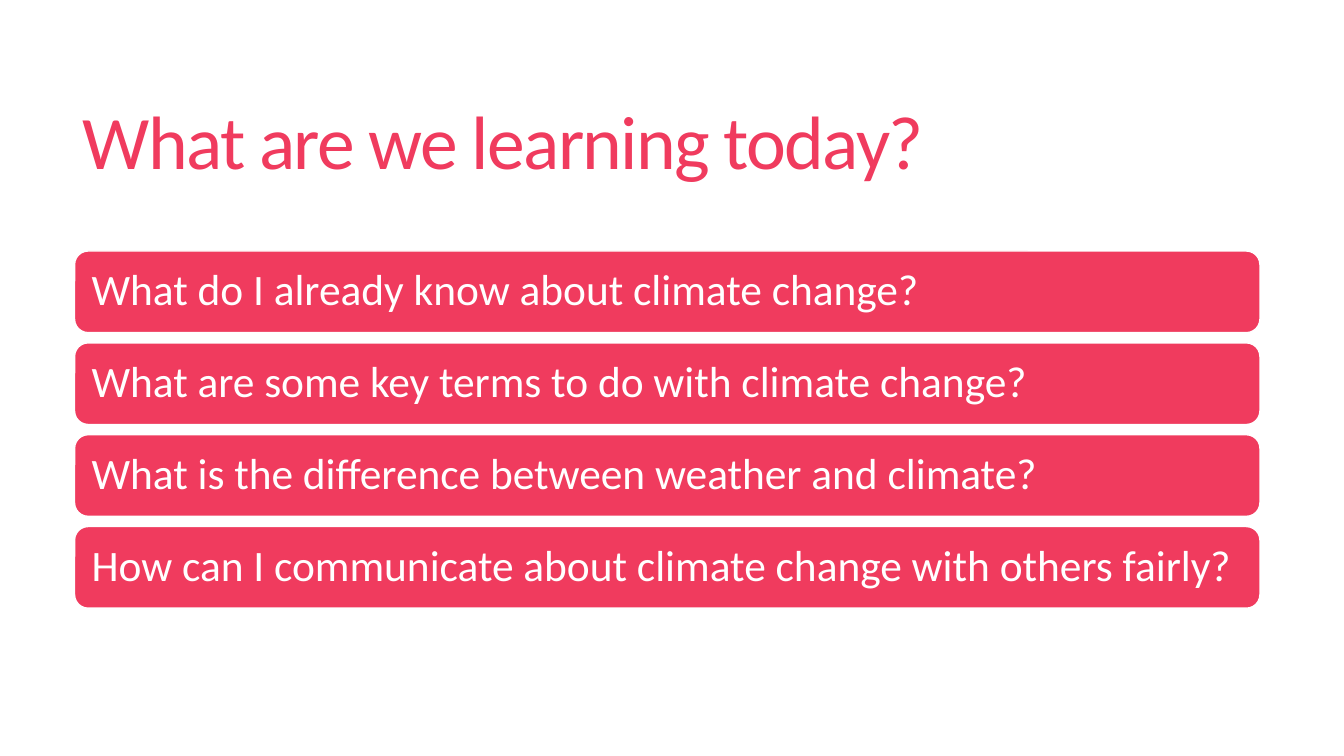
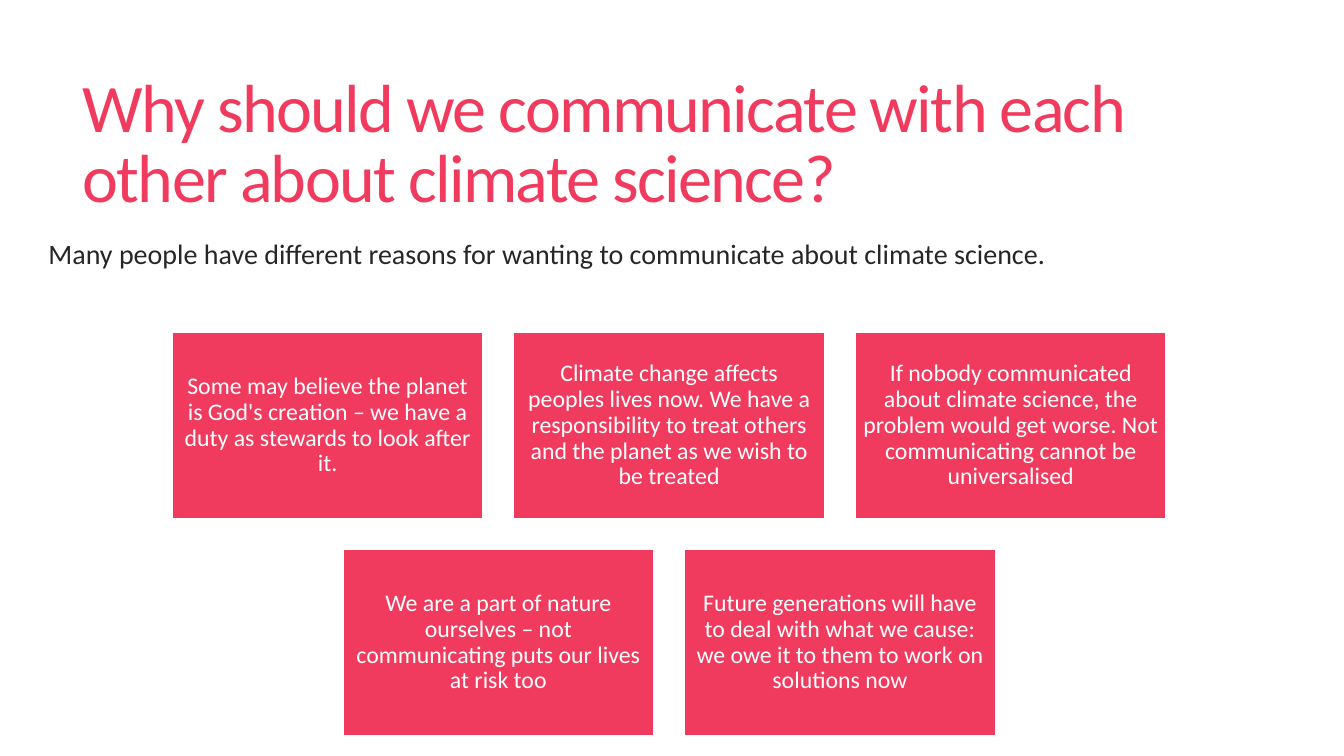
from dataclasses import dataclass

from pptx import Presentation
from pptx.dml.color import RGBColor
from pptx.enum import shapes, text
from pptx.util import Pt


@dataclass(frozen=True)
class Theme:
    font: str = "Calibri"
    accent: RGBColor = RGBColor(0xF0, 0x3B, 0x5E)
    ink: RGBColor = RGBColor(0x26, 0x26, 0x26)
    white: RGBColor = RGBColor(0xFF, 0xFF, 0xFF)
    title: float = 54
    long_title: float = 48.6
    question: float = 31
    lead: float = 20
    reason: float = 17


THEME = Theme()
LEFT, CENTER = text.PP_ALIGN.LEFT, text.PP_ALIGN.CENTER
TOP, MIDDLE = text.MSO_ANCHOR.TOP, text.MSO_ANCHOR.MIDDLE
TITLE_BOX = (51.8, 39.6, 848.2, 130.3)

AIMS = {
    "title": "What are we learning today?",
    "questions": [
        "What do I already know about climate change?",
        "What are some key terms to do with climate change?",
        "What is the difference between weather and climate?",
        "How can I communicate about climate change with others fairly?",
    ],
}
WHY = {
    "title": "Why should we communicate with each other about climate science?",
    "lead": "Many people have different reasons for wanting to communicate about climate science.",
    "reasons": [
        [
            "Some may believe the planet is God's creation – we have a duty as stewards to look after it.",
            "Climate change affects peoples lives now. We have a responsibility to treat others and the planet as we wish to be treated",
            "If nobody communicated about climate science, the problem would get worse. Not communicating cannot be universalised",
        ],
        [
            "We are a part of nature ourselves – not communicating puts our lives at risk too",
            "Future generations will have to deal with what we cause: we owe it to them to work on solutions now",
        ],
    ],
}


def write(sp, content, size, color, align=LEFT, anchor=MIDDLE, spacing=0.9, insets=(7.2, 3.6, 7.2, 3.6)):
    tf = sp.text_frame
    frame = {"word_wrap": True, "auto_size": text.MSO_AUTO_SIZE.NONE, "vertical_anchor": anchor}
    frame.update(zip(("margin_left", "margin_top", "margin_right", "margin_bottom"), map(Pt, insets)))
    for name, value in frame.items():
        setattr(tf, name, value)
    p = tf.paragraphs[0]
    p.alignment, p.line_spacing = align, spacing
    r = p.add_run()
    r.text = content
    for name, value in {"name": THEME.font, "size": Pt(size)}.items():
        setattr(r.font, name, value)
    r.font.color.rgb = color
    return r


def add_slide(prs, title, size):
    s = prs.slides.add_slide(prs.slide_layouts[5])
    sp = s.shapes.title
    for name, value in zip(("left", "top", "width", "height"), TITLE_BOX):
        setattr(sp, name, Pt(value))
    r = write(sp, title, size, THEME.accent, spacing=0.85)
    r._r.get_or_add_rPr().set("spc", "-120")
    return s


def add_card(s, kind, box, content, size, align, inset):
    sp = s.shapes.add_shape(kind, *map(Pt, box))
    sp.shadow.inherit = False
    sp.fill.solid()
    sp.fill.fore_color.rgb = THEME.accent
    sp.line.color.rgb = THEME.white
    sp.line.width = Pt(1)
    write(sp, content, size, THEME.white, align, insets=(inset,) * 4)


def build_aims(prs):
    s = add_slide(prs, AIMS["title"], THEME.title)
    left, top, width, height, gap = 53.3, 179.3, 846.7, 58.3, 7.3
    for i, question in enumerate(AIMS["questions"]):
        box = (left, top + i * (height + gap), width, height)
        add_card(s, shapes.MSO_SHAPE.ROUNDED_RECTANGLE, box, question, THEME.question, LEFT, 9.3)


def build_why(prs):
    s = add_slide(prs, WHY["title"], THEME.long_title)
    sp = s.shapes.add_textbox(*map(Pt, (20.2, 169.2, 928, 57.6)))
    write(sp, WHY["lead"], THEME.lead, THEME.ink, anchor=TOP, spacing=0.85, insets=(14.4, 3.6, 7.2, 3.6))
    center, top, width, height, gap = 478, 237.6, 222, 133, 22
    for i, row in enumerate(WHY["reasons"]):
        left = center - (len(row) * (width + gap) - gap) / 2
        for j, reason in enumerate(row):
            box = (left + j * (width + gap), top + i * (height + gap), width, height)
            add_card(s, shapes.MSO_SHAPE.RECTANGLE, box, reason, THEME.reason, CENTER, 4.8)


def main():
    prs = Presentation()
    prs.slide_width, prs.slide_height = Pt(960), Pt(540)
    build_aims(prs)
    build_why(prs)
    prs.save("out.pptx")


if __name__ == "__main__":
    main()
